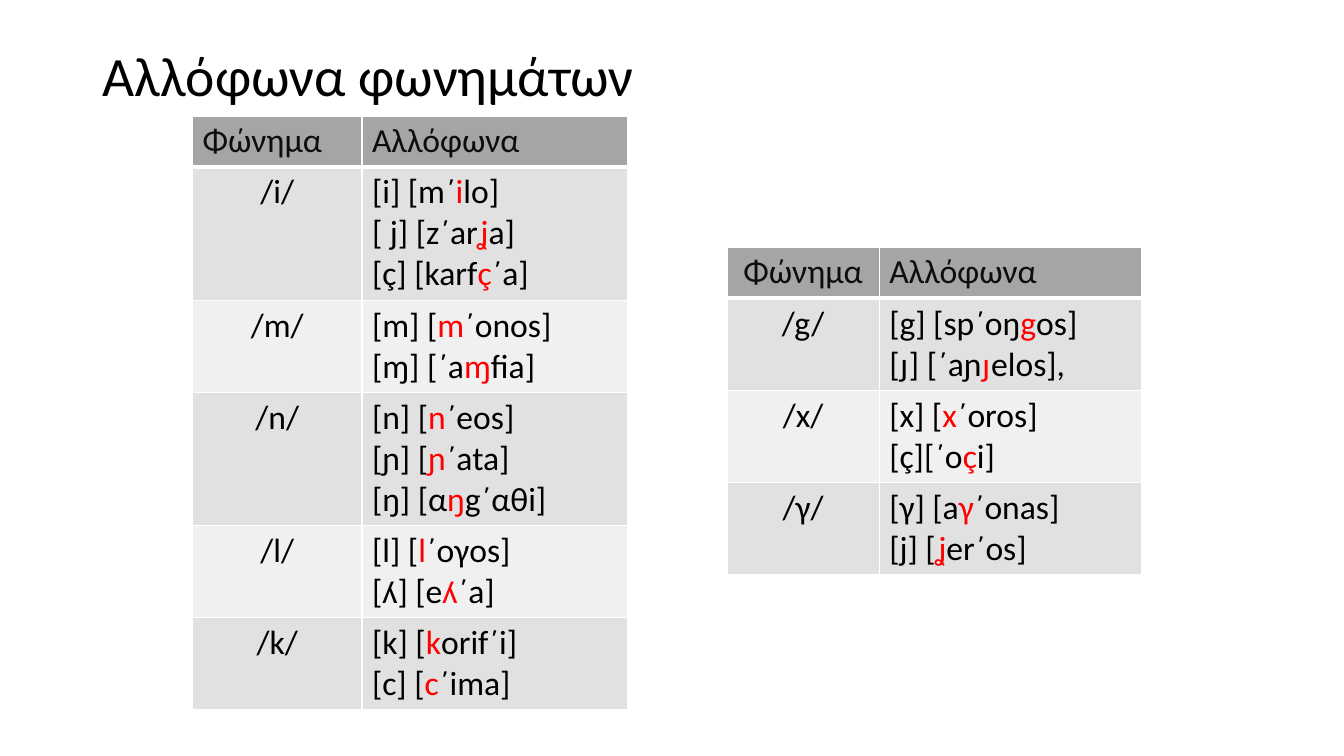
from lxml import etree
from pptx import Presentation
from pptx.dml.color import RGBColor
from pptx.enum.text import MSO_ANCHOR, MSO_AUTO_SIZE, PP_ALIGN
from pptx.oxml.ns import qn
from pptx.util import Inches, Pt

LEFT, CENTER = PP_ALIGN.LEFT, PP_ALIGN.CENTER
MIDDLE = MSO_ANCHOR.MIDDLE
NO_AUTOFIT = MSO_AUTO_SIZE.NONE

BLACK = RGBColor(0x00, 0x00, 0x00)
WHITE = RGBColor(0xFF, 0xFF, 0xFF)
RED = RGBColor(0xFF, 0x00, 0x00)
HEADER_TEXT = RGBColor(0x0D, 0x0D, 0x0D)
HEADER_FILL = RGBColor(0xA5, 0xA5, 0xA5)
BAND_FILLS = (RGBColor(0xE1, 0xE1, 0xE1), RGBColor(0xF0, 0xF0, 0xF0))

FONT = "Calibri"
LINE_HEIGHT = 0.4
CELL_PADDING = 0.1
HEADERS = ("Φώνημα", "Αλλόφωνα")

VOWEL_AND_SONORANTS = [
    ("/i/", ["[i] [m΄|i|lo]", "[ j] [z΄ar|ʝ|a]", "[ç] [karf|ç|΄a]"]),
    ("/m/", ["[m] [|m|΄onos]", "[ɱ] [΄a|ɱ|fia]"]),
    ("/n/", ["[n] [|n|΄eos]", "[ɲ] [|ɲ|΄ata]", "[ŋ] [α|ŋ|g΄αθi]"]),
    ("/l/", ["[l] [|l|΄oγos]", "[ʎ] [e|ʎ|΄a]"]),
    ("/k/", ["[k] [|k|orif΄i]", "[c] [|c|΄ima]"]),
]
VELARS = [
    ("/g/", ["[g] [sp΄oŋ|g|os]", "[ɟ] [΄aɲ|ɟ|elos],"]),
    ("/x/", ["[x] [|x|΄oros]", "[ç][΄o|ç|i]"]),
    ("/γ/", ["[γ] [a|γ|΄onas]", "[j] [|ʝ|er΄os]"]),
]


def format_font(font, size, color):
    font.name = FONT
    font.size = Pt(size)
    font.bold = False
    font.color.rgb = color


def add_borders(cell, bottom_width):
    properties = cell._tc.get_or_add_tcPr()
    widths = (("a:lnL", 1), ("a:lnR", 1), ("a:lnT", 1), ("a:lnB", bottom_width))
    for position, (tag, width) in enumerate(widths):
        line = etree.Element(qn(tag), w=str(Pt(width)))
        fill = etree.SubElement(line, qn("a:solidFill"))
        etree.SubElement(fill, qn("a:srgbClr"), val=str(WHITE))
        properties.insert(position, line)


def fill_cell(cell, lines, alignment, fill, color, bottom_width=1):
    cell.fill.solid()
    cell.fill.fore_color.rgb = fill
    add_borders(cell, bottom_width)
    text_frame = cell.text_frame
    for index, line in enumerate(lines):
        paragraph = text_frame.add_paragraph() if index else text_frame.paragraphs[0]
        paragraph.alignment = alignment
        for part, text in enumerate(line.split("|")):
            if text:
                run = paragraph.add_run()
                run.text = text
                format_font(run.font, 24, RED if part == 1 else color)


def add_title(slide, left, top, width, height):
    title = slide.shapes.title
    title.left, title.top = Inches(left), Inches(top)
    title.width, title.height = Inches(width), Inches(height)
    text_frame = title.text_frame
    text_frame.text = "Aλλόφωνα φωνημάτων"
    text_frame.auto_size = NO_AUTOFIT
    text_frame.vertical_anchor = MIDDLE
    paragraph = text_frame.paragraphs[0]
    paragraph.alignment = LEFT
    paragraph.line_spacing = 0.9
    format_font(paragraph.runs[0].font, 39.6, BLACK)


def add_allophone_table(slide, left, top, column_widths, phonemes, header_alignment):
    line_counts = [1] + [len(allophones) for _, allophones in phonemes]
    heights = [count * LINE_HEIGHT + CELL_PADDING for count in line_counts]
    frame = slide.shapes.add_table(
        len(heights), len(column_widths), Inches(left), Inches(top),
        Inches(sum(column_widths)), Inches(sum(heights)))
    table = frame.table
    for column, width in zip(table.columns, column_widths):
        column.width = Inches(width)
    for row, height in zip(table.rows, heights):
        row.height = Inches(height)
    for column, alignment in enumerate((header_alignment, LEFT)):
        fill_cell(table.cell(0, column), [HEADERS[column]], alignment,
                  HEADER_FILL, HEADER_TEXT, bottom_width=3)
    for index, (phoneme, allophones) in enumerate(phonemes):
        fill = BAND_FILLS[index % 2]
        fill_cell(table.cell(index + 1, 0), [phoneme], CENTER, fill, BLACK)
        fill_cell(table.cell(index + 1, 1), allophones, LEFT, fill, BLACK)


def main():
    presentation = Presentation()
    presentation.slide_width = Inches(13.33)
    presentation.slide_height = Inches(7.5)
    slide = presentation.slides.add_slide(presentation.slide_layouts[5])
    add_title(slide, 0.92, 0.4, 11.05, 0.75)
    add_allophone_table(slide, 1.91, 1.15, (1.68, 2.63), VOWEL_AND_SONORANTS, LEFT)
    add_allophone_table(slide, 7.21, 2.45, (1.51, 2.6), VELARS, CENTER)
    presentation.save("out.pptx")


if __name__ == "__main__":
    main()
